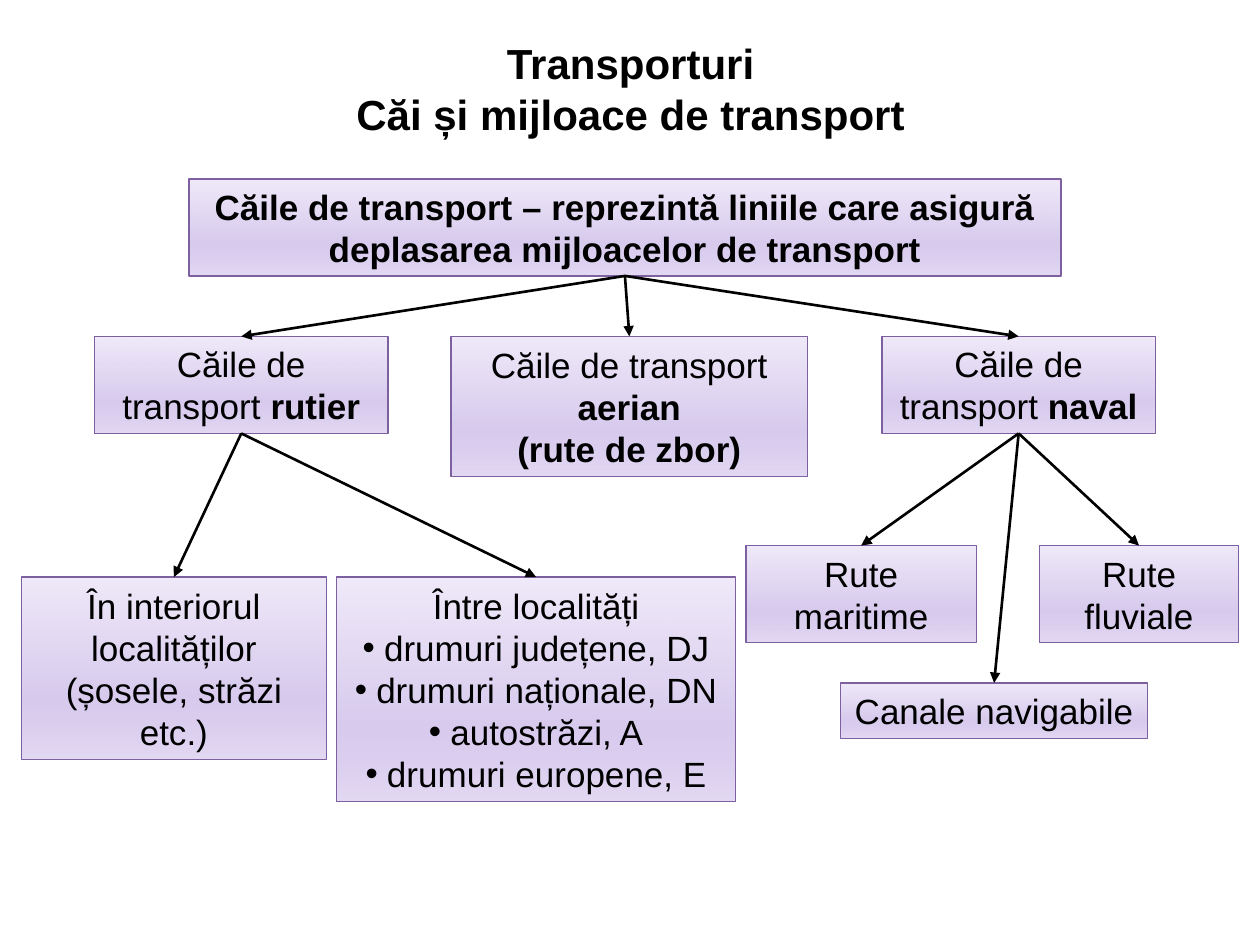
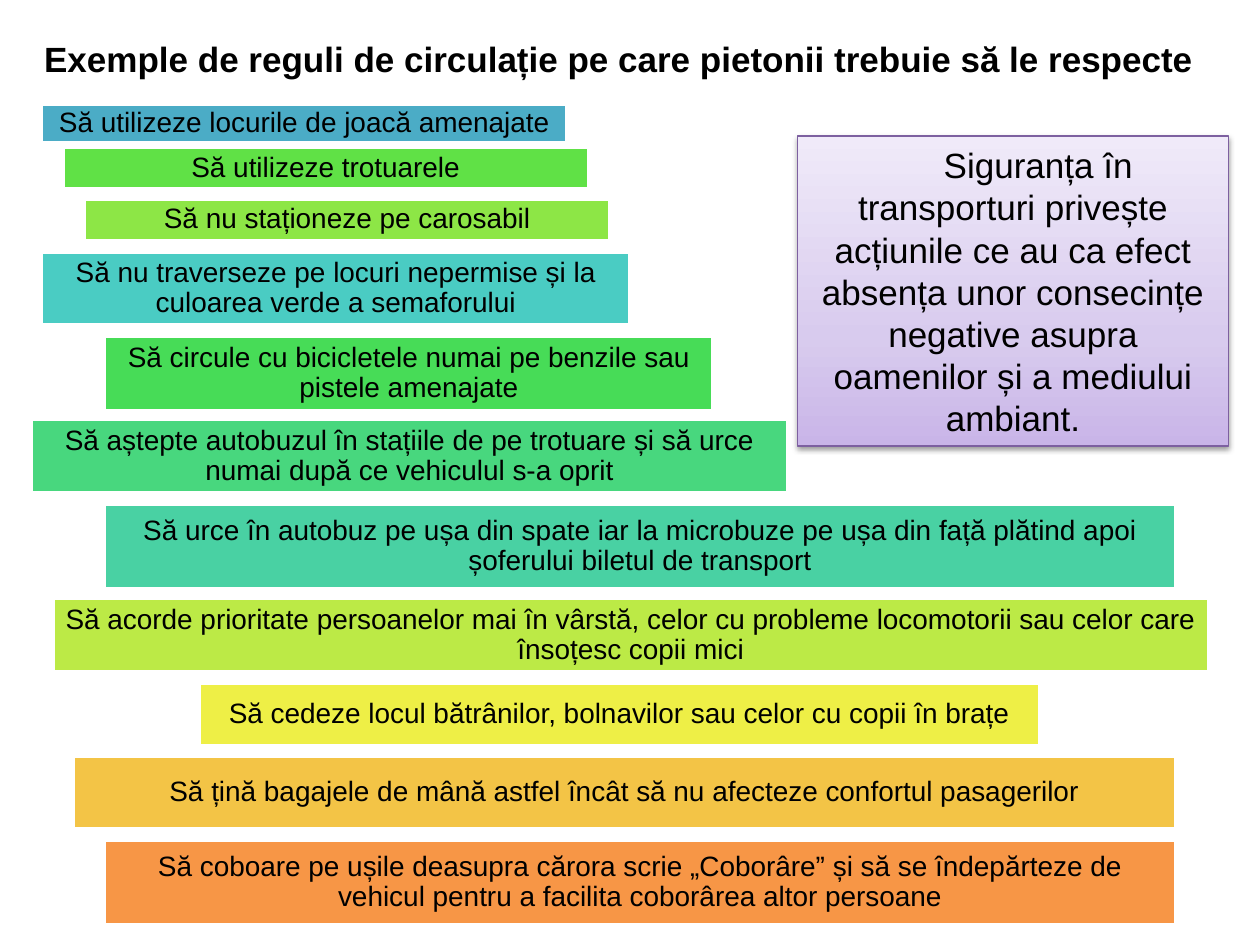
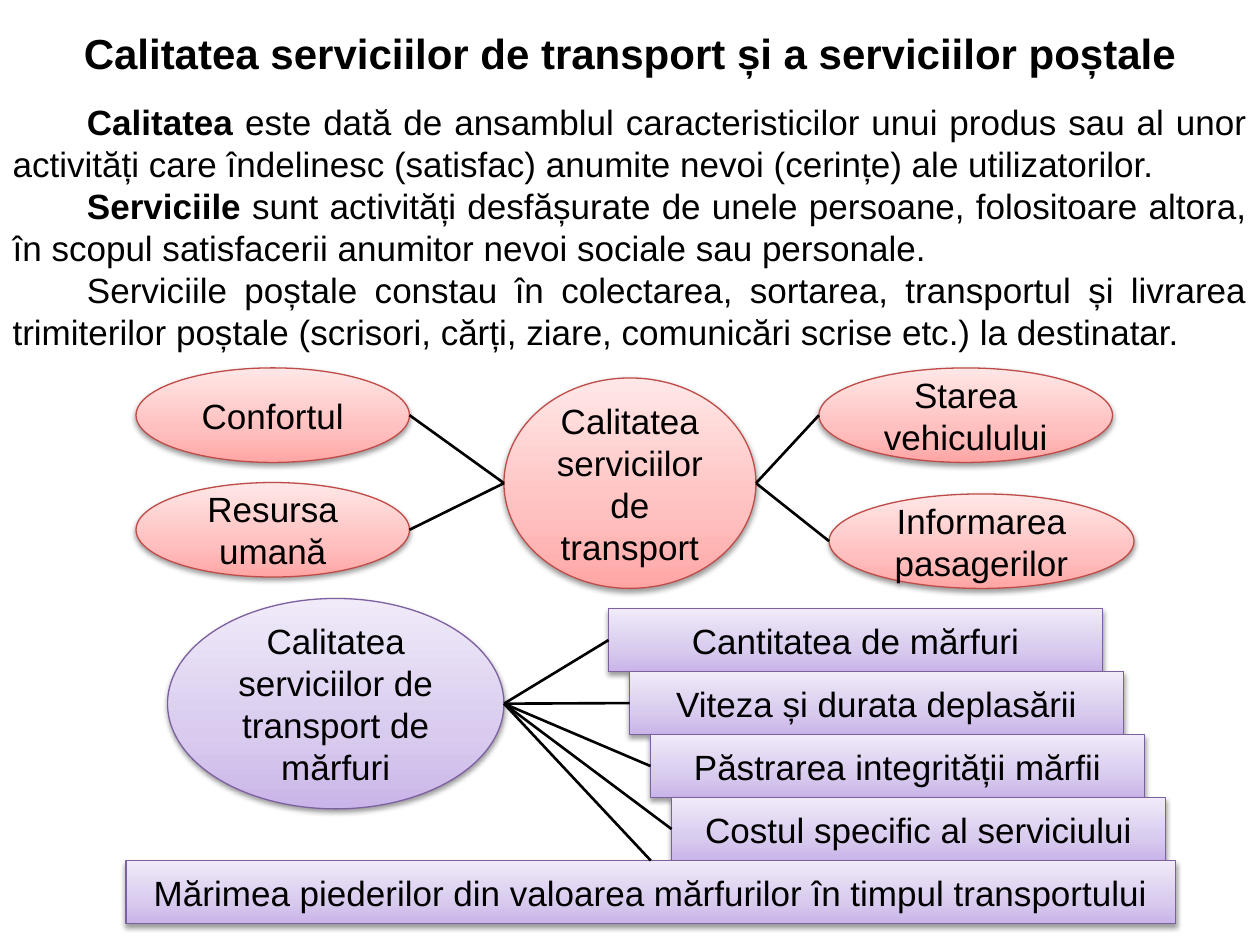
"""Build three slides on transport routes, pedestrian rules and service quality."""
from dataclasses import dataclass
from typing import NamedTuple, Optional

from lxml import etree
from pptx import Presentation
from pptx import util as u
from pptx.dml.color import RGBColor
from pptx.enum import shapes, text
from pptx.oxml import ns

RECT = shapes.MSO_SHAPE.RECTANGLE
OVAL = shapes.MSO_SHAPE.OVAL
ALIGN = text.PP_ALIGN
TOP, LEFT, BOTTOM = 0, 1, 2


class Tint(NamedTuple):
    """Gradient from bottom to top, with its outline colour."""
    stops: tuple[str, str, str]
    line: str
    base_alpha: int = 100


@dataclass(frozen=True)
class Theme:
    """Colours and type sizes shared by the slides."""
    font: str = "Arial"
    ink: str = "000000"
    white: str = "FFFFFF"
    title: int = 24
    body: int = 20
    rule: int = 16
    lilac: Tint = Tint(("C9B5E8", "D8CBEE", "F0EAF9"), "7D60A0")
    pale_lilac: Tint = Tint(("C9B5E8", "D8CBEE", "F0EAF9"), "7D60A0", 50)
    rose: Tint = Tint(("FFA6A5", "FFC0BF", "FFE7E7"), "BF4C48")


THEME = Theme()


class Area(NamedTuple):
    """Place and size in inches."""
    left: float
    top: float
    width: float
    height: float

    def lengths(self) -> list:
        """Return the four values as lengths."""
        return [u.Inches(v) for v in self]


class Node(NamedTuple):
    """A labelled shape of a diagram."""
    label: str
    area: Area


class Rule(NamedTuple):
    """A coloured bar holding one rule."""
    label: str
    color: str
    area: Area


def rgb(color: str) -> RGBColor:
    """Turn a hex string into a colour."""
    return RGBColor.from_string(color)


def add_xml(parent, tag: str, **attrs):
    """Append a DrawingML element."""
    return etree.SubElement(parent, ns.qn(f"a:{tag}"),
                            {k: str(v) for k, v in attrs.items()})


def write(s, content: str, *, size: int = THEME.body, bold: bool = False,
          align=ALIGN.CENTER, indent: float = 0, spacing: float = 1,
          anchor=text.MSO_ANCHOR.MIDDLE, inset: Optional[float] = None) -> None:
    """Fill a shape with paragraphs, where ** toggles bold and • starts a bullet."""
    tf = s.text_frame
    tf.word_wrap = True
    tf.auto_size = text.MSO_AUTO_SIZE.NONE
    tf.vertical_anchor = anchor
    if inset is not None:
        tf.margin_left = tf.margin_right = u.Inches(inset)
        tf.margin_top = tf.margin_bottom = u.Inches(inset)
    for i, line in enumerate(content.split("\n")):
        p = tf.paragraphs[0] if i == 0 else tf.add_paragraph()
        p.alignment = align
        p.line_spacing = spacing
        p.space_before = u.Pt(0)
        bullet = line.startswith("• ")
        hang = 0.17 if bullet else 0
        pPr = p._p.get_or_add_pPr()
        pPr.set("marL", str(u.Inches(hang)))
        pPr.set("indent", str(u.Inches(indent - hang)))
        if bullet:
            add_xml(pPr, "buFont", typeface=THEME.font)
            add_xml(pPr, "buChar", char="•")
        else:
            add_xml(pPr, "buNone")
        for j, part in enumerate(line.removeprefix("• ").split("**")):
            if part:
                r = p.add_run()
                r.text = part
                r.font.name = THEME.font
                r.font.size = u.Pt(size)
                r.font.bold = bold or j % 2 == 1
                r.font.color.rgb = rgb(THEME.ink)


def place(s, area: Area) -> None:
    """Move a placeholder."""
    s.left, s.top, s.width, s.height = area.lengths()


def new_slide(prs, layout: int, title: str, area: Area, **fmt):
    """Add a slide with a bold title."""
    slide = prs.slides.add_slide(prs.slide_layouts[layout])
    place(slide.shapes.title, area)
    write(slide.shapes.title, title, bold=True, anchor=text.MSO_ANCHOR.TOP, **fmt)
    return slide


def add_node(slide, node: Node, tint: Tint, kind=RECT, shadow: bool = True, **fmt):
    """Draw a labelled shape with a gradient fill."""
    s = slide.shapes.add_shape(kind, *node.area.lengths())
    s.fill.gradient()
    s.fill.gradient_angle = 90
    stops = s._element.spPr.find(f".//{ns.qn('a:gsLst')}")
    for stop in list(stops):
        stops.remove(stop)
    for pos, color, alpha in zip((0, 35, 100), tint.stops, (tint.base_alpha, 100, 100)):
        clr = add_xml(add_xml(stops, "gs", pos=pos * 1000), "srgbClr", val=color)
        if alpha < 100:
            add_xml(clr, "alpha", val=alpha * 1000)
    s.line.color.rgb = rgb(tint.line)
    s.line.width = u.Pt(0.75)
    s.shadow.inherit = False
    if shadow:
        effects = s._element.spPr.find(ns.qn("a:effectLst"))
        outer = add_xml(effects, "outerShdw", blurRad=u.Pt(3.1), dist=u.Pt(1.6),
                        dir=90 * 60000, rotWithShape=0)
        add_xml(add_xml(outer, "srgbClr", val=THEME.ink), "alpha", val=38000)
    write(s, node.label, **fmt)
    return s


def side_point(s, side: str) -> tuple[int, int]:
    """Return the middle of the left or right side."""
    return s.left + (s.width if side == "right" else 0), s.top + s.height // 2


def add_line(slide, start: tuple[int, int], end: tuple[int, int], arrow: bool = False):
    """Draw a straight black connector."""
    c = slide.shapes.add_connector(shapes.MSO_CONNECTOR.STRAIGHT, *start, *end)
    c.line.color.rgb = rgb(THEME.ink)
    c.line.width = u.Pt(1.5)
    if arrow:
        add_xml(c.line._get_or_add_ln(), "tailEnd", type="triangle")
    add_xml(c._element.spPr, "effectLst")
    return c


def routes_slide(prs) -> None:
    """Draw the tree of transport routes."""
    slide = new_slide(prs, 5, "Transporturi\nCăi și mijloace de transport",
                      Area(0.42, 0.25, 9.17, 0.91), size=THEME.title)
    nodes = {
        "routes": Node("**Căile de transport – reprezintă liniile care asigură "
                       "deplasarea mijloacelor de transport**", Area(1.5, 1.42, 6.92, 0.77)),
        "road": Node("Căile de transport **rutier**", Area(0.75, 2.67, 2.33, 0.77)),
        "air": Node("Căile de transport **aerian**\n**(rute de zbor)**",
                    Area(3.58, 2.67, 2.83, 1.11)),
        "water": Node("Căile de transport **naval**", Area(7, 2.67, 2.17, 0.77)),
        "local": Node("În interiorul localităților\n(șosele, străzi etc.)",
                      Area(0.17, 4.58, 2.42, 1.45)),
        "intercity": Node("Între localități\n• drumuri județene, DJ\n• drumuri naționale, DN\n"
                          "• autostrăzi, A\n• drumuri europene, E", Area(2.67, 4.58, 3.17, 1.78)),
        "sea": Node("Rute maritime", Area(5.92, 4.33, 1.83, 0.77)),
        "river": Node("Rute fluviale", Area(8.25, 4.33, 1.58, 0.77)),
        "canal": Node("Canale navigabile", Area(6.67, 5.42, 2.44, 0.44)),
    }
    branches = {"routes": ("road", "air", "water"), "road": ("local", "intercity"),
                "water": ("sea", "river", "canal")}
    drawn = {key: add_node(slide, node, THEME.pale_lilac, shadow=False)
             for key, node in nodes.items()}
    for parent, children in branches.items():
        for child in children:
            c = add_line(slide, (0, 0), (0, 0), arrow=True)
            c.begin_connect(drawn[parent], BOTTOM)
            c.end_connect(drawn[child], TOP)


def rules_slide(prs) -> None:
    """Draw the bars of pedestrian rules and the safety note."""
    slide = new_slide(prs, 5,
                      "Exemple de reguli de circulație pe care pietonii trebuie să le respecte",
                      Area(0.25, 0.25, 9.42, 0.44), size=THEME.body, align=ALIGN.LEFT)
    rules = (
        Rule("Să utilizeze locurile de joacă amenajate", "4BACC6", Area(0.33, 0.83, 4.17, 0.3)),
        Rule("Să utilizeze trotuarele", "60E146", Area(0.5, 1.17, 4.17, 0.33)),
        Rule("Să nu staționeze pe carosabil", "8DE646", Area(0.67, 1.58, 4.17, 0.33)),
        Rule("Să nu traverseze pe locuri nepermise și la culoarea verde a semaforului",
             "4ACCC3", Area(0.33, 2, 4.67, 0.58)),
        Rule("Să circule cu bicicletele numai pe benzile sau pistele amenajate",
             "47DC57", Area(0.83, 2.67, 4.83, 0.59)),
        Rule("Să aștepte autobuzul în stațiile de pe trotuare și să urce numai după ce "
             "vehiculul s-a oprit", "48D77E", Area(0.25, 3.33, 6, 0.58)),
        Rule("Să urce în autobuz pe ușa din spate iar la microbuze pe ușa din față plătind "
             "apoi șoferului biletul de transport", "49D1A3", Area(0.83, 4, 8.5, 0.67)),
        Rule("Să acorde prioritate persoanelor mai în vârstă, celor cu probleme locomotorii "
             "sau celor care însoțesc copii mici", "BCEA46", Area(0.42, 4.75, 9.17, 0.58)),
        Rule("Să cedeze locul bătrânilor, bolnavilor sau celor cu copii în brațe",
             "EEEF46", Area(1.58, 5.42, 6.67, 0.5)),
        Rule("Să țină bagajele de mână astfel încât să nu afecteze confortul pasagerilor",
             "F3C446", Area(0.58, 6, 8.75, 0.58)),
        Rule("Să coboare pe ușile deasupra cărora scrie „Coborâre” și să se îndepărteze de "
             "vehicul pentru a facilita coborârea altor persoane",
             "F79646", Area(0.83, 6.67, 8.5, 0.67)),
    )
    for rule in rules:
        s = slide.shapes.add_shape(RECT, *rule.area.lengths())
        s.shadow.inherit = False
        s.fill.solid()
        s.fill.fore_color.rgb = rgb(rule.color)
        s.line.color.rgb = rgb(THEME.white)
        s.line.width = u.Pt(2)
        write(s, rule.label, size=THEME.rule, spacing=0.9, inset=0.07)
    note = Node("Siguranța în transporturi privește acțiunile ce au ca efect absența unor "
                "consecințe negative asupra oamenilor și a mediului ambiant.",
                Area(6.33, 1.08, 3.42, 2.46))
    add_node(slide, note, THEME.lilac, indent=0.4)


def quality_slide(prs) -> None:
    """Define quality and draw its factors for passengers and goods."""
    slide = new_slide(prs, 1, "Calitatea serviciilor de transport și a serviciilor poștale",
                      Area(0, 0.17, 10, 0.5), size=THEME.title)
    body = slide.placeholders[1]
    place(body, Area(0, 0.75, 10, 2.12))
    write(body,
          "**Calitatea** este dată de ansamblul caracteristicilor unui produs sau al unor "
          "activități care îndelinesc (satisfac) anumite nevoi (cerințe) ale utilizatorilor.\n"
          "**Serviciile** sunt activități desfășurate de unele persoane, folositoare altora, "
          "în scopul satisfacerii anumitor nevoi sociale sau personale.\n"
          "Serviciile poștale constau în colectarea, sortarea, transportul și livrarea "
          "trimiterilor poștale (scrisori, cărți, ziare, comunicări scrise etc.) la destinatar.",
          align=ALIGN.JUSTIFY, indent=0.59, anchor=text.MSO_ANCHOR.TOP)

    passengers = add_node(slide, Node("Calitatea serviciilor de transport",
                                      Area(4, 3, 2, 1.67)), THEME.rose, OVAL)
    factors = {
        "left": (Node("Confortul", Area(1.08, 2.92, 2.17, 0.75)),
                 Node("Resursa umană", Area(1.08, 3.83, 2.17, 0.75))),
        "right": (Node("Starea vehiculului", Area(6.5, 2.92, 2.33, 0.75)),
                  Node("Informarea pasagerilor", Area(6.58, 3.92, 2.42, 0.75))),
    }
    for side, nodes in factors.items():
        facing = "right" if side == "left" else "left"
        for node in nodes:
            s = add_node(slide, node, THEME.rose, OVAL)
            add_line(slide, side_point(passengers, side), side_point(s, facing))

    goods = add_node(slide, Node("Calitatea serviciilor de transport de mărfuri",
                                 Area(1.33, 4.75, 2.67, 1.67)), THEME.lilac, OVAL)
    steps = ("Cantitatea de mărfuri", "Viteza și durata deplasării",
             "Păstrarea integrității mărfii", "Costul specific al serviciului")
    targets = [(Node(label, Area(4.83 + i / 6, 4.83 + i / 2, 3.92, 0.5)), LEFT)
               for i, label in enumerate(steps)]
    targets.append((Node("Mărimea piederilor din valoarea mărfurilor în timpul transportului",
                         Area(1, 6.83, 8.33, 0.5)), TOP))
    boxes = [(add_node(slide, node, THEME.lilac), site) for node, site in targets]
    for s, site in boxes:
        c = add_line(slide, side_point(goods, "right"), side_point(s, "left"))
        c.end_connect(s, site)


def main() -> None:
    """Build and save the presentation."""
    prs = Presentation()
    prs.slide_width, prs.slide_height = u.Inches(10), u.Inches(7.5)
    routes_slide(prs)
    rules_slide(prs)
    quality_slide(prs)
    prs.save("out.pptx")


if __name__ == "__main__":
    main()
